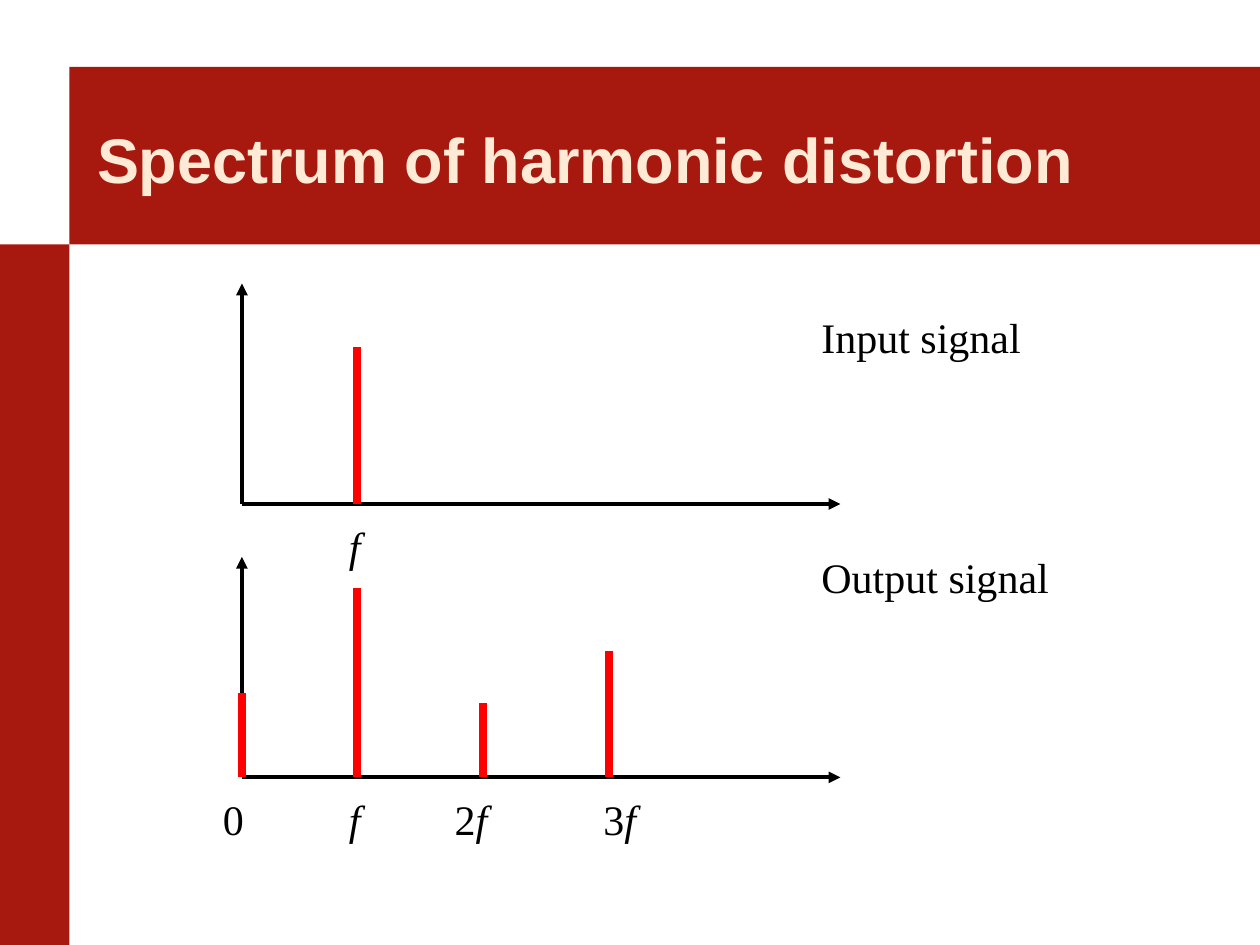
import pptx
import pptx.dml.color
import pptx.enum.shapes
import pptx.enum.text
import pptx.oxml.ns
import pptx.util
from lxml import etree
from pptx.util import Inches, Pt

RED_BAND = pptx.dml.color.RGBColor(0xA7, 0x19, 0x0E)
CREAM = pptx.dml.color.RGBColor(0xFF, 0xEB, 0xD5)
BLACK = pptx.dml.color.RGBColor(0, 0, 0)
RED = pptx.dml.color.RGBColor(0xFF, 0, 0)

# Content
TITLE = "Spectrum of harmonic distortion"
BANDS = [(0.55, 0.53, 9.45, 1.41), (0, 1.94, 0.55, 5.56)]
ORIGIN_X, AXIS_WIDTH, AXIS_HEIGHT = 1.92, 4.75, 1.75
# Each spectrum: baseline and its bars as (x, height)
SPECTRA = [
    (4.00, [(2.83, 1.25)]),
    (6.17, [(ORIGIN_X, 0.67), (2.83, 1.5), (3.83, 0.59), (4.83, 1.0)]),
]
# Each label: left, top, width, height, runs as (text, italic), tab stops
LABELS = [
    (6.42, 2.42, 2.58, 0.51, [("Input signal", False)], []),
    (6.42, 4.33, 2.58, 0.51, [("Output signal", False)], []),
    (2.67, 4.08, 0.5, 0.5, [("f", True)], []),
    (1.67, 6.25, 4.25, 0.5,
     [("0\t", False), ("f\t", True), ("2", False), ("f\t", True),
      ("3", False), ("f", True)],
     [1.0, 1.84, 3.02]),
]


def add_child(parent, tag, **attributes):
    return etree.SubElement(parent, pptx.oxml.ns.qn(tag), **attributes)


def add_line(page, start, end, color, width, arrow=False):
    line = page.shapes.add_connector(
        pptx.enum.shapes.MSO_CONNECTOR.STRAIGHT,
        *(Inches(value) for value in (*start, *end)))
    line.line.color.rgb = color
    line.line.width = Pt(width)
    if arrow:
        add_child(line.line._get_or_add_ln(), "a:tailEnd", type="triangle")
    add_child(line._element.spPr, "a:effectLst")


def add_label(page, left, top, width, height, runs, tabs):
    box = page.shapes.add_textbox(*map(Inches, (left, top, width, height)))
    box.text_frame.word_wrap = True
    para = box.text_frame.paragraphs[0]
    if tabs:
        tab_list = add_child(para._p.get_or_add_pPr(), "a:tabLst")
        for tab in tabs:
            add_child(tab_list, "a:tab", pos=str(Inches(tab)), algn="l")
    para.font.name = "Times New Roman"
    para.font.size = Pt(24)
    para.font.color.rgb = BLACK
    for text, italic in runs:
        span = para.add_run()
        span.text = text
        span.font.italic = italic


deck = pptx.Presentation()
deck.slide_width, deck.slide_height = Inches(10), Inches(7.5)
page = deck.slides.add_slide(deck.slide_layouts[5])
title = page.shapes.title

# Red bands, placed behind the title
for band in BANDS:
    shape = page.shapes.add_shape(
        pptx.enum.shapes.MSO_SHAPE.RECTANGLE, *map(Inches, band))
    shape.shadow.inherit = False
    shape.fill.solid()
    shape.fill.fore_color.rgb = RED_BAND
    shape.line.fill.background()
    title._element.addprevious(shape._element)

# Title
title.left, title.top, title.width, title.height = map(
    Inches, (0.67, 0.69, 9.21, 1.13))
title.text_frame.text = TITLE
title.text_frame.vertical_anchor = pptx.enum.text.MSO_ANCHOR.MIDDLE
para = title.text_frame.paragraphs[0]
para.alignment = pptx.enum.text.PP_ALIGN.LEFT
para.font.name = "Arial"
para.font.size = Pt(36)
para.font.bold = True
para.font.color.rgb = CREAM

# Axes and spectral bars
for baseline, bars in SPECTRA:
    origin = (ORIGIN_X, baseline)
    for tip in [(ORIGIN_X, baseline - AXIS_HEIGHT),
                (ORIGIN_X + AXIS_WIDTH, baseline)]:
        add_line(page, origin, tip, BLACK, 2.25, arrow=True)
    for x, height in bars:
        add_line(page, (x, baseline), (x, baseline - height), RED, 4.5)

# Labels
for label in LABELS:
    add_label(page, *label)

deck.save("out.pptx")
